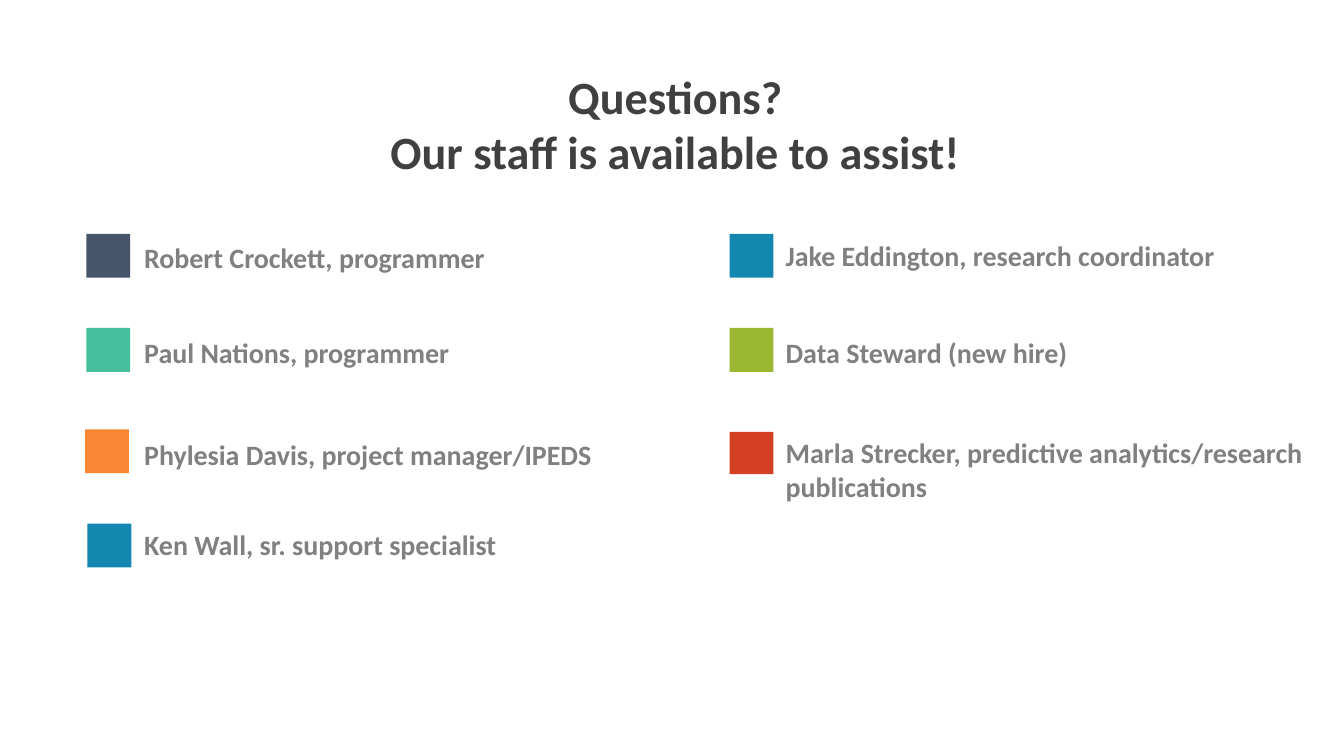
from dataclasses import dataclass
from pptx import Presentation
from pptx.dml.color import RGBColor
from pptx.enum.shapes import MSO_SHAPE as Shape
from pptx.enum.text import MSO_ANCHOR as Anchor, PP_ALIGN as Align
from pptx.util import Pt


@dataclass(frozen=True)
class Theme:
    """Colours, font and type sizes of the slide."""
    font: str = "Calibri"
    title_size: int = 66
    label_size: int = 40
    title: str = "404040"
    label: str = "808080"
    navy: str = "46556A"
    green: str = "44BE9B"
    orange: str = "F98634"
    blue: str = "1487B1"
    lime: str = "9CB833"
    red: str = "D44024"


@dataclass(frozen=True)
class Box:
    """A rectangle in points."""
    left: float
    top: float
    width: float
    height: float

    def inner(self, left, top, width, height):
        """Return a box placed relative to this one."""
        return Box(self.left + left, self.top + top, width, height)

    def lengths(self):
        """Return the four lengths in the order the shape methods take."""
        return [Pt(value) for value in (self.left, self.top, self.width, self.height)]


@dataclass(frozen=True)
class Member:
    """A staff member, with swatch and label placed inside a column."""
    text: str
    colour: str
    swatch_top: float
    label_top: float
    label_width: float
    label_height: float
    swatch_shift: float = 0
    swatch_height: float = 62.6


THEME = Theme()
SWATCH_WIDTH = 62.6
LEFT_STAFF = [
    Member("Robert Crockett, programmer", THEME.navy, 0, -2, 633, 72),
    Member("Paul Nations, programmer", THEME.green, 134.6, 121, 633, 96.5),
    Member("Phylesia Davis, project manager/IPEDS", THEME.orange, 279.4, 264.2, 687.6, 101.5, -2),
    Member("Ken Wall, sr. support specialist", THEME.blue, 414, 411.1, 687.6, 65.5, 1.5),
]
RIGHT_STAFF = [
    Member("Jake Eddington, research coordinator", THEME.blue, 0, -19.4, 687.6, 101.5),
    Member("Data Steward (new hire)", THEME.lime, 134.6, 122.4, 728, 95),
    Member("Marla Strecker, predictive analytics/research publications",
           THEME.red, 283, 285.8, 797.8, 101.5, swatch_height=60.5),
]


def add_text(page, box, text, size, colour, align=Align.LEFT):
    """Add bold, vertically centred text in a box."""
    frame = page.shapes.add_textbox(*box.lengths()).text_frame
    frame.word_wrap = True
    frame.vertical_anchor = Anchor.MIDDLE
    frame.margin_left = frame.margin_right = 0
    frame.margin_top = frame.margin_bottom = Pt(8)
    frame.text = text
    para = frame.paragraphs[0]
    para.alignment = align
    for span in para.runs:
        span.font.name = THEME.font
        span.font.size = Pt(size)
        span.font.bold = True
        span.font.color.rgb = RGBColor.from_string(colour)


def add_swatch(page, box, colour):
    """Add a plain coloured square."""
    swatch = page.shapes.add_shape(Shape.ROUNDED_RECTANGLE, *box.lengths())
    swatch.adjustments[0] = 0
    swatch.shadow.inherit = False
    swatch.fill.solid()
    swatch.fill.fore_color.rgb = RGBColor.from_string(colour)
    swatch.line.fill.background()


def add_title(page, box):
    """Add the two-line centred title."""
    add_text(page, box, "Questions?\vOur staff is available to assist!",
             THEME.title_size, THEME.title, Align.CENTER)


def add_staff_column(page, box, staff, indent):
    """Add a column of swatches, each with a label indented from the left."""
    for member in staff:
        add_swatch(page, box.inner(member.swatch_shift, member.swatch_top,
                                   SWATCH_WIDTH, member.swatch_height), member.colour)
        add_text(page, box.inner(indent, member.label_top,
                                 member.label_width, member.label_height),
                 member.text, THEME.label_size, THEME.label)


def main():
    """Build and save the staff slide."""
    deck = Presentation()
    deck.slide_width, deck.slide_height = Pt(1920.24), Pt(1080)
    page = deck.slides.add_slide(deck.slide_layouts[6])
    add_title(page, Box(121, 142.6, 1687.7, 67.7))
    add_staff_column(page, Box(123.5, 334, 770, 480), LEFT_STAFF, 82.5)
    add_staff_column(page, Box(1042.5, 334, 877, 480), RIGHT_STAFF, 80)
    deck.save("out.pptx")


if __name__ == "__main__":
    main()
